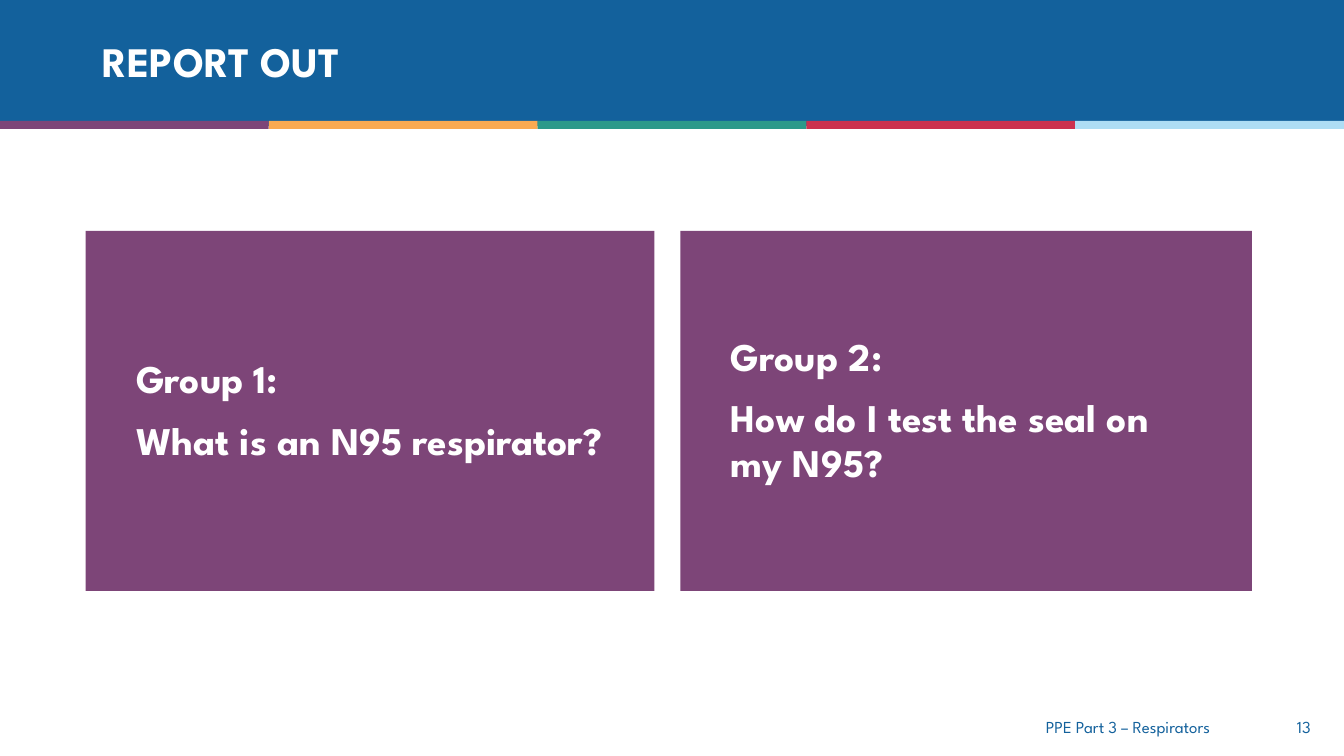
import pptx
import pptx.dml.color
import pptx.enum.shapes
import pptx.enum.text
import pptx.util
from pptx.util import Cm

BLUE, PURPLE, WHITE = "13619C", "7D4578", "FFFFFF"
STRIPE_COLOURS = [PURPLE, "FAAA51", "2C998A", "CC314E", "AEDDF4"]
SLIDE_WIDTH, SLIDE_HEIGHT = 33.87, 19.05
ALIGN = pptx.enum.text.PP_ALIGN

TITLE = {"size": 30, "bold": True, "colour": WHITE, "line_spacing": 0.9}
QUESTION = {"size": 28, "bold": True, "colour": WHITE, "line_spacing": 0.95}
FOOTER = {"size": 12, "bold": False, "colour": BLUE, "alignment": ALIGN.RIGHT}

# left, width, lines
GROUPS = [
    (2.16, 14.33, ["Group 1:", "What is an N95 respirator?"]),
    (17.15, 14.4, ["Group 2:", "How do I test the seal on my N95?"]),
]


def colour(hex_value):
    return pptx.dml.color.RGBColor.from_string(hex_value)


def write(frame, lines, style, inset=None):
    frame.word_wrap = True
    frame.vertical_anchor = pptx.enum.text.MSO_ANCHOR.MIDDLE
    if inset is not None:
        for side in ("left", "right", "top", "bottom"):
            setattr(frame, f"margin_{side}", Cm(inset))
    layout = {"alignment": style.get("alignment", ALIGN.LEFT),
              "line_spacing": style.get("line_spacing", 1.0)}
    lettering = {"name": "League Spartan", "bold": style["bold"],
                 "size": pptx.util.Pt(style["size"])}
    for index, line in enumerate(lines):
        paragraph = frame.add_paragraph() if index else frame.paragraphs[0]
        paragraph.space_before = pptx.util.Pt(12 if index else 0)
        for name, value in layout.items():
            setattr(paragraph, name, value)
        run = paragraph.add_run()
        run.text = line
        for name, value in lettering.items():
            setattr(run.font, name, value)
        run.font.color.rgb = colour(style["colour"])


def add_block(slide, left, top, width, height, fill):
    block = slide.shapes.add_shape(
        pptx.enum.shapes.MSO_SHAPE.RECTANGLE,
        Cm(left), Cm(top), Cm(width), Cm(height))
    block.shadow.inherit = False
    block.fill.solid()
    block.fill.fore_color.rgb = colour(fill)
    block.line.fill.background()
    return block


def add_label(slide, left, top, width, height, text, style):
    label = slide.shapes.add_textbox(Cm(left), Cm(top), Cm(width), Cm(height))
    write(label.text_frame, [text], style)


def main():
    deck = pptx.Presentation()
    deck.slide_width, deck.slide_height = Cm(SLIDE_WIDTH), Cm(SLIDE_HEIGHT)
    slide = deck.slides.add_slide(deck.slide_layouts[6])

    # Header band with its row of equal stripes
    add_block(slide, 0, 0, SLIDE_WIDTH, 3.18, BLUE)
    stripe_width = SLIDE_WIDTH / len(STRIPE_COLOURS)
    for index, fill in enumerate(STRIPE_COLOURS):
        add_block(slide, index * stripe_width, 3.05, stripe_width, 0.2, fill)
    add_label(slide, 2.34, 1.02, 27.99, 1.17, "REPORT OUT", TITLE)

    # Group questions
    for left, width, lines in GROUPS:
        card = add_block(slide, left, 5.82, width, 9.07, PURPLE)
        write(card.text_frame, lines, QUESTION, inset=1.27)

    # Footer
    add_label(slide, 13, 17.81, 17.75, 1.02, "PPE Part 3 – Respirators", FOOTER)
    add_label(slide, 31.55, 17.81, 1.73, 1.02, "13", FOOTER)

    deck.save("out.pptx")


if __name__ == "__main__":
    main()
